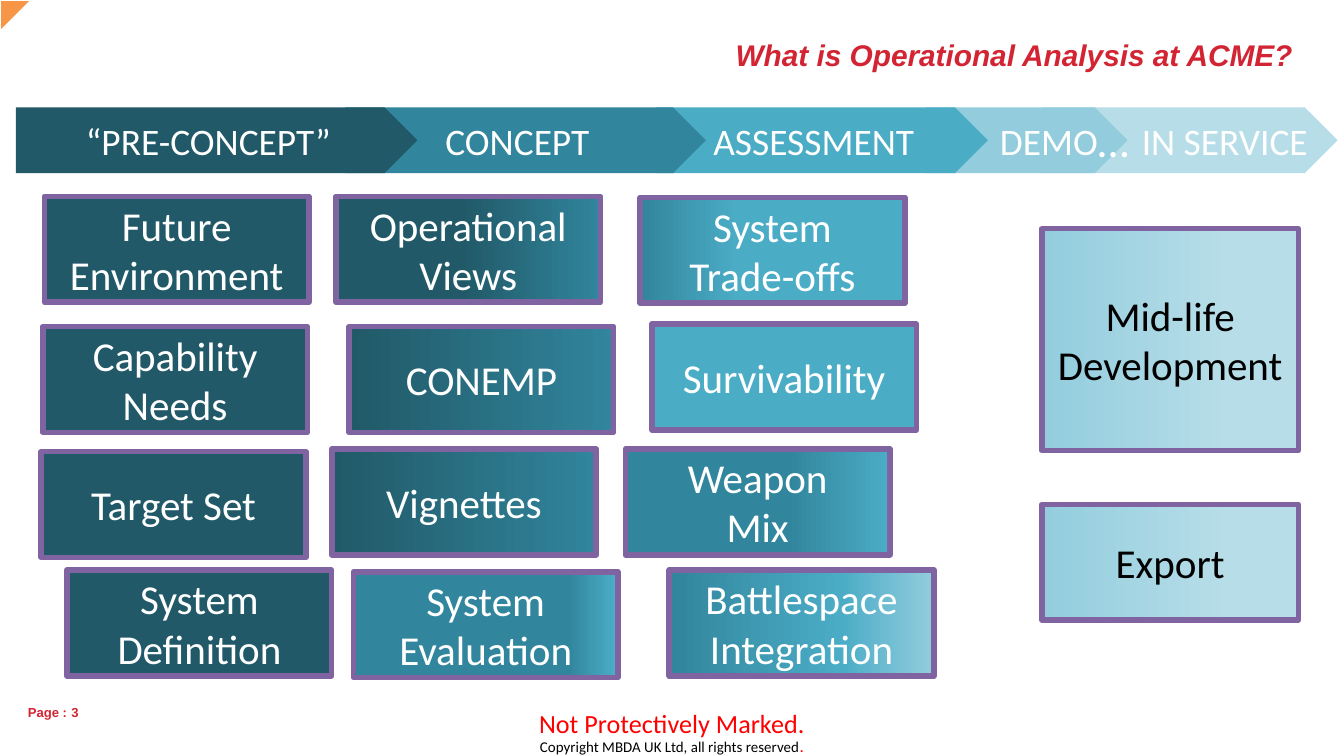
from lxml import etree
from pptx import Presentation
from pptx.dml.color import RGBColor
from pptx.enum.shapes import MSO_SHAPE as Shape
from pptx.enum.text import MSO_ANCHOR as Anchor, PP_ALIGN as Align
from pptx.oxml.ns import qn
from pptx.util import Cm, Pt

WHITE = RGBColor(0xFF, 0xFF, 0xFF)
BLACK = RGBColor(0x00, 0x00, 0x00)
RED = RGBColor(0xFF, 0x00, 0x00)
CRIMSON = RGBColor(0xD2, 0x24, 0x32)
ORANGE = RGBColor(0xF7, 0x96, 0x46)
PURPLE = RGBColor(0x80, 0x64, 0xA2)
DARK_TEAL = RGBColor(0x21, 0x59, 0x68)
TEAL = RGBColor(0x31, 0x85, 0x9C)
AQUA = RGBColor(0x4B, 0xAC, 0xC6)
LIGHT_AQUA = RGBColor(0x93, 0xCD, 0xDD)
PALE_AQUA = RGBColor(0xB7, 0xDE, 0xE8)

TITLE = {"name": "Arial", "size": Pt(16), "bold": True, "italic": True}
PAGE = {"name": "Arial", "size": Pt(7), "bold": True}
PHASE = {"name": "Calibri", "size": Pt(20)}
ACTIVITY = {"name": "Calibri", "size": Pt(22)}
ELLIPSIS = {"name": "Calibri", "size": Pt(24)}
MARKING = {"name": "Calibri", "size": Pt(14)}
COPYRIGHT = {"name": "Calibri", "size": Pt(8)}
FULL_STOP = {"name": "Calibri", "size": Pt(9)}


def write(shape, text, formats, color, alignment=Align.CENTER, anchor=Anchor.MIDDLE):
    frame = shape.text_frame
    frame.text = text
    frame.vertical_anchor = anchor
    for paragraph in frame.paragraphs:
        paragraph.alignment = alignment
        for run in paragraph.runs:
            for name, value in formats.items():
                setattr(run.font, name, value)
            run.font.color.rgb = color


def paint(shape, stops):
    """Fill with one colour, or left to right through (percent, colour) stops."""
    shape.shadow.inherit = False
    if len(stops) == 1:
        shape.fill.solid()
        shape.fill.fore_color.rgb = stops[0][1]
        return
    shape.fill.gradient()
    shape.fill.gradient_angle = 0
    stop_list = shape.element.spPr.find(qn("a:gradFill")).find(qn("a:gsLst"))
    for old_stop in list(stop_list):
        stop_list.remove(old_stop)
    for percent, color in stops:
        stop = etree.SubElement(stop_list, qn("a:gs"), pos=str(percent * 1000))
        etree.SubElement(stop, qn("a:srgbClr"), val=str(color))


presentation = Presentation()
presentation.slide_width = Cm(25.4)
presentation.slide_height = Cm(14.28)
slide = presentation.slides.add_slide(presentation.slide_layouts[5])
shapes = slide.shapes

# Title
title = shapes.title
title.left, title.top, title.width, title.height = Cm(3.56), Cm(0.23), Cm(21.13), Cm(1.6)
write(title, "What is Operational Analysis at ACME?", TITLE, CRIMSON, Align.RIGHT)

# Footer marking and copyright
marking = shapes.add_textbox(0, Cm(13.23), Cm(25.4), Cm(0.86))
marking.text_frame.word_wrap = True
write(marking, "Not Protectively Marked.", MARKING, RED, anchor=Anchor.TOP)

notice = shapes.add_textbox(Cm(0.1), Cm(13.77), Cm(25.2), Cm(0.64))
notice.text_frame.word_wrap = True
write(notice, "Copyright MBDA UK Ltd, all rights reserved", COPYRIGHT, BLACK, anchor=Anchor.TOP)
full_stop = notice.text_frame.paragraphs[0].add_run()
full_stop.text = "."
for name, value in FULL_STOP.items():
    setattr(full_stop.font, name, value)
full_stop.font.color.rgb = RED

# Page number
for text, left, top, width, height, anchor in (
    ("Page :", 0.53, 13.31, 0.74, 0.3, Anchor.TOP),
    ("3", 1.35, 13.21, 0.5, 0.48, Anchor.MIDDLE),
):
    label = shapes.add_textbox(Cm(left), Cm(top), Cm(width), Cm(height))
    for side in ("left", "top", "right", "bottom"):
        setattr(label.text_frame, f"margin_{side}", 0)
    label.text_frame.word_wrap = False
    write(label, text, PAGE, CRIMSON, Align.LEFT, anchor)

# Project phases, the earlier ones overlapping the later ones
for text, left, width, color, alignment in (
    ("IN SERVICE", 19.69, 5.59, PALE_AQUA, Align.RIGHT),
    ("DEMO", 17.5, 3.81, LIGHT_AQUA, Align.RIGHT),
    ("ASSESSMENT", 12.4, 6.27, AQUA, Align.CENTER),
    ("CONCEPT", 6.53, 6.81, TEAL, Align.CENTER),
    ("“PRE-CONCEPT”", 0.3, 7.59, DARK_TEAL, Align.CENTER),
):
    phase = shapes.add_shape(Shape.PENTAGON, Cm(left), Cm(2.03), Cm(width), Cm(1.24))
    paint(phase, [(0, color)])
    phase.line.fill.background()
    write(phase, text, PHASE, WHITE, alignment)

ellipsis = shapes.add_textbox(Cm(20.5), Cm(2.01), Cm(1.12), Cm(1.27))
ellipsis.text_frame.word_wrap = False
write(ellipsis, "…", ELLIPSIS, WHITE, Align.LEFT, Anchor.TOP)

# Activities, placed under the phases they serve
DARK = [(0, DARK_TEAL)]
DARK_TO_TEAL = [(0, DARK_TEAL), (100, TEAL)]
LATE = [(0, LIGHT_AQUA), (74, PALE_AQUA)]
SMALL = (5, 2)
for text, left, top, (width, height), stops, color in (
    ("Future Environment", 0.84, 3.71, SMALL, DARK, WHITE),
    ("Capability Needs", 0.81, 6.17, SMALL, DARK, WHITE),
    ("Target Set", 0.78, 8.53, SMALL, DARK, WHITE),
    ("System Definition", 1.27, 10.77, SMALL, DARK, WHITE),
    ("Operational Views", 6.35, 3.71, SMALL, [(47, DARK_TEAL), (100, TEAL)], WHITE),
    ("CONEMP", 6.6, 6.17, SMALL, DARK_TO_TEAL, WHITE),
    ("Vignettes", 6.27, 8.48, SMALL, DARK_TO_TEAL, WHITE),
    ("System\nEvaluation", 6.68, 10.8, SMALL, [(81, TEAL), (99, AQUA)], WHITE),
    ("System\nTrade-offs", 12.1, 3.73, SMALL, [(0, TEAL), (37, AQUA)], WHITE),
    ("Survivability", 12.32, 6.12, SMALL, [(0, AQUA)], WHITE),
    ("Weapon\nMix", 11.82, 8.48, SMALL, [(61, TEAL), (100, AQUA)], WHITE),
    ("Battlespace Integration", 12.65, 10.77, SMALL,
     [(0, TEAL), (65, AQUA), (100, LIGHT_AQUA)], WHITE),
    ("Mid-life Development", 19.69, 4.32, (4.85, 4.19), LATE, BLACK),
    ("Export", 19.69, 9.53, (4.85, 2.18), LATE, BLACK),
):
    activity = shapes.add_shape(Shape.RECTANGLE, Cm(left), Cm(top), Cm(width), Cm(height))
    paint(activity, stops)
    activity.line.color.rgb = PURPLE
    activity.line.width = Pt(3)
    write(activity, text, ACTIVITY, color)

# Corner mark
corner = shapes.add_shape(Shape.RIGHT_TRIANGLE, Cm(0.02), Cm(0.02), Cm(0.53), Cm(0.53))
corner.rotation = 90
paint(corner, [(0, ORANGE)])
corner.line.fill.background()

presentation.save("out.pptx")
